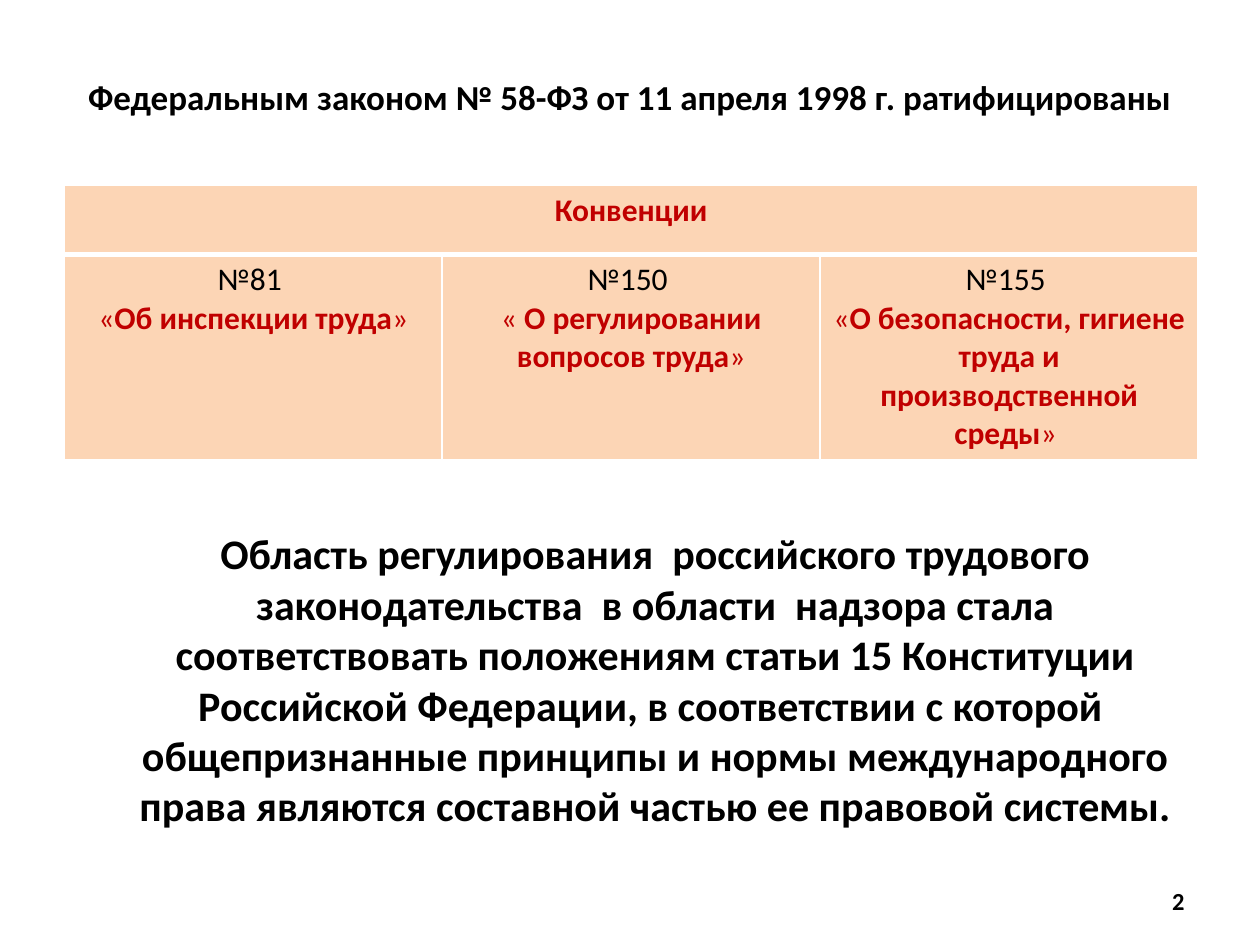
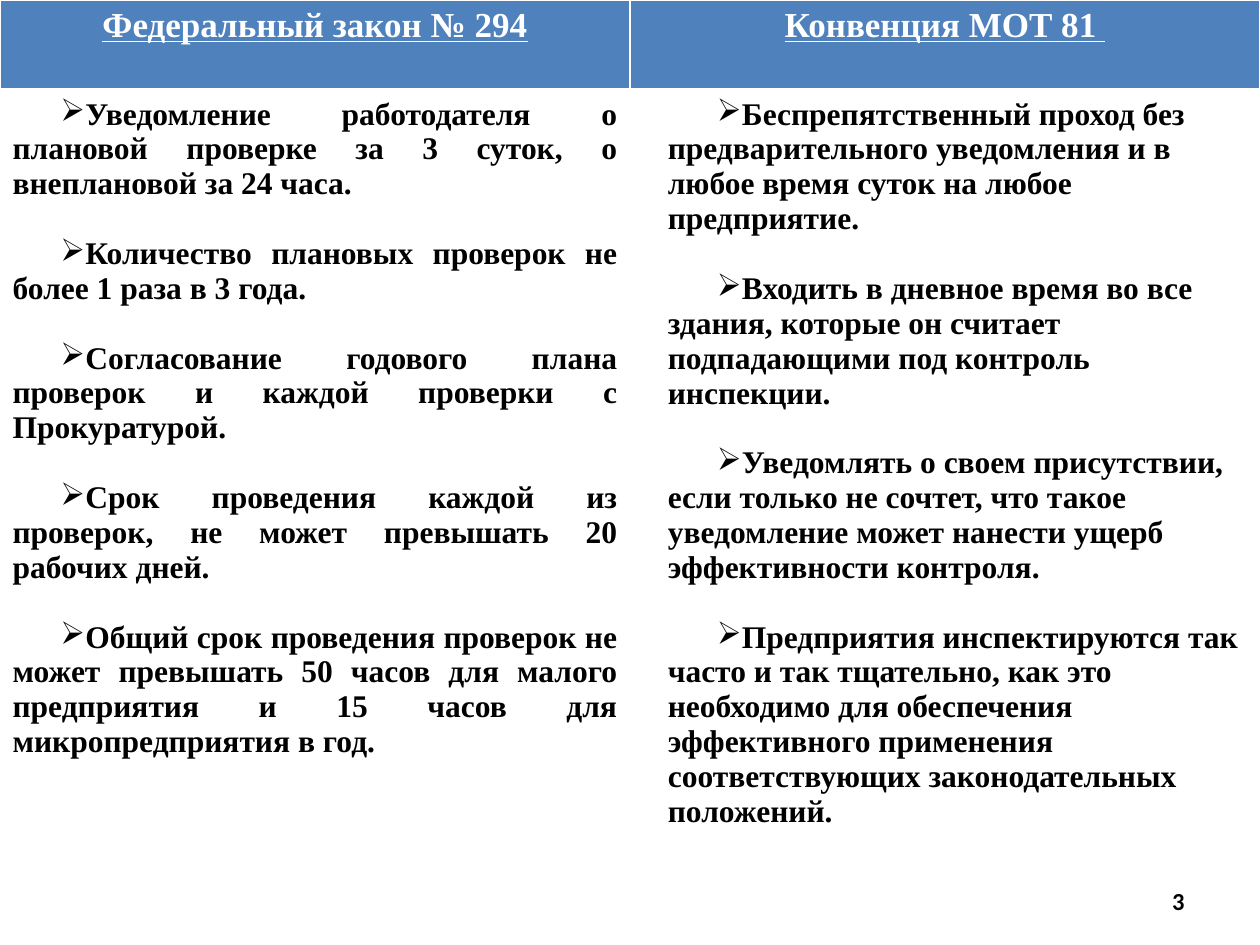
from lxml import etree
from pptx import Presentation
from pptx import util as u
from pptx.dml.color import RGBColor
from pptx.enum import text as t
from pptx.oxml.ns import qn

COLORS = {"ink": "000000", "white": "FFFFFF", "accent": "C00000",
          "peach": "FCD5B5", "blue": "4F81BD"}
SANS, SERIF = "Calibri", "Times New Roman"
ALIGN = t.PP_ALIGN
LINE_GAP = 19.9  # points: one empty line of 18 pt serif text


def write(paragraph, text, size=18, font=SANS, color="ink", bold=True,
          underline=False, align=ALIGN.CENTER):
    """Add one formatted run to the paragraph."""
    paragraph.alignment = align
    run = paragraph.add_run()
    run.text = text
    run.font.size = u.Pt(size)
    run.font.name = font
    run.font.bold = bold
    run.font.underline = underline
    run.font.color.rgb = RGBColor.from_string(COLORS[color])


def style_cell(cell, fill=None, bottom=1):
    """Fill the cell and give it white borders; bottom is a width in points."""
    properties = cell._tc.get_or_add_tcPr()
    for side, width in (("L", 1), ("R", 1), ("T", 1), ("B", bottom)):
        line = etree.SubElement(properties, qn(f"a:ln{side}"), w=str(u.Pt(width)))
        solid = etree.SubElement(line, qn("a:solidFill"))
        etree.SubElement(solid, qn("a:srgbClr"), val=COLORS["white"])
    if fill:
        cell.fill.solid()
        cell.fill.fore_color.rgb = RGBColor.from_string(COLORS[fill])
    else:
        cell.fill.background()


presentation = Presentation()
presentation.slide_width, presentation.slide_height = u.Inches(10), u.Inches(7.5)
blank = presentation.slide_layouts[6]
conventions_slide = presentation.slides.add_slide(blank)
comparison_slide = presentation.slides.add_slide(blank)

# Ratified conventions
conventions = [
    ("№81 ", "«", "Об инспекции труда", "»"),
    ("№150 ", "« ", "О регулировании вопросов труда", "»"),
    ("№155 ", "«", "О безопасности, гигиене труда и производственной среды", "» "),
]
table = conventions_slide.shapes.add_table(
    2, 3, u.Inches(0.51), u.Inches(1.47), u.Inches(9), u.Inches(2.15)).table
table.horz_banding = False
table.rows[0].height, table.rows[1].height = u.Inches(0.55), u.Inches(1.6)
for column, (number, opening, name, closing) in enumerate(conventions):
    style_cell(table.cell(0, column), "peach", bottom=3)
    cell = table.cell(1, column)
    style_cell(cell, "peach")
    write(cell.text_frame.paragraphs[0], number, bold=False)
    paragraph = cell.text_frame.add_paragraph()
    write(paragraph, opening, color="accent", bold=False)
    write(paragraph, name, color="accent")
    write(paragraph, closing, color="accent", bold=False)
table.cell(0, 0).merge(table.cell(0, 2))
write(table.cell(0, 0).text_frame.paragraphs[0], "Конвенции", color="accent")

# Federal law against the convention
comparison = [
    ("Федеральный закон № 294", ALIGN.JUSTIFY, 0, 0.38, [
        "Уведомление работодателя о плановой проверке за 3 суток, о внеплановой за 24 часа.",
        "Количество плановых проверок не более 1 раза в 3 года.",
        "Согласование годового плана проверок и каждой проверки с Прокуратурой.",
        "Срок проведения каждой из проверок, не может превышать 20 рабочих дней.",
        "Общий срок проведения проверок не может превышать 50 часов для малого "
        "предприятия и 15 часов для микропредприятия в год.",
    ]),
    ("Конвенция МОТ 81 ", ALIGN.LEFT, 0.2, 0.39, [
        "Беспрепятственный проход без предварительного уведомления и в любое время "
        "суток на любое предприятие.",
        "Входить в дневное время во все здания, которые он считает подпадающими под "
        "контроль инспекции.",
        "Уведомлять о своем присутствии, если только не сочтет, что такое уведомление "
        "может нанести ущерб эффективности контроля.",
        "Предприятия инспектируются так часто и так тщательно, как это необходимо для "
        "обеспечения эффективного применения соответствующих законодательных положений.",
    ]),
]
table = comparison_slide.shapes.add_table(
    2, 2, 0, 0, presentation.slide_width, presentation.slide_height).table
table.horz_banding = False
table.rows[0].height, table.rows[1].height = u.Inches(0.72), u.Inches(6.78)
for column, (heading, align, margin, indent, points) in enumerate(comparison):
    header, body = table.cell(0, column), table.cell(1, column)
    style_cell(header, "blue", bottom=3)
    style_cell(body)
    write(header.text_frame.paragraphs[0], heading, size=20, font=SERIF,
          color="white", underline=True)
    for index, point in enumerate(points):
        frame = body.text_frame
        paragraph = frame.add_paragraph() if index else frame.paragraphs[0]
        write(paragraph, point, font=SERIF, align=align)
        if point != points[-1]:
            paragraph.space_after = u.Pt(LINE_GAP)
        properties = paragraph._p.get_or_add_pPr()
        properties.set("marL", str(u.Inches(margin)))
        properties.set("indent", str(u.Inches(indent)))
        etree.SubElement(properties, qn("a:buChar"), char="➢")

# Title, conclusion and page numbers
title = "Федеральным законом № 58-ФЗ от 11 апреля 1998 г. ратифицированы"
conclusion = (
    "Область регулирования  российского трудового законодательства  в области  надзора "
    "стала соответствовать положениям статьи 15 Конституции Российской Федерации, в "
    "соответствии с которой  общепризнанные принципы и нормы международного права "
    "являются составной частью ее правовой системы.")
number_place = (7.17, 6.95, 2.33, 0.4)
middle, top = t.MSO_ANCHOR.MIDDLE, t.MSO_ANCHOR.TOP
text_boxes = [
    (conventions_slide, title, (0.5, 0.3, 9, 0.93), 20, middle, ALIGN.CENTER),
    (conventions_slide, conclusion, (0.75, 4.14, 8.9, 2.52), 24, top, ALIGN.CENTER),
    (conventions_slide, "2", number_place, 14, middle, ALIGN.RIGHT),
    (comparison_slide, "3", number_place, 14, middle, ALIGN.RIGHT),
]
for slide, words, place, size, anchor, align in text_boxes:
    frame = slide.shapes.add_textbox(*map(u.Inches, place)).text_frame
    frame.word_wrap = True
    frame.vertical_anchor = anchor
    write(frame.paragraphs[0], words, size=size, align=align)

presentation.save("out.pptx")
